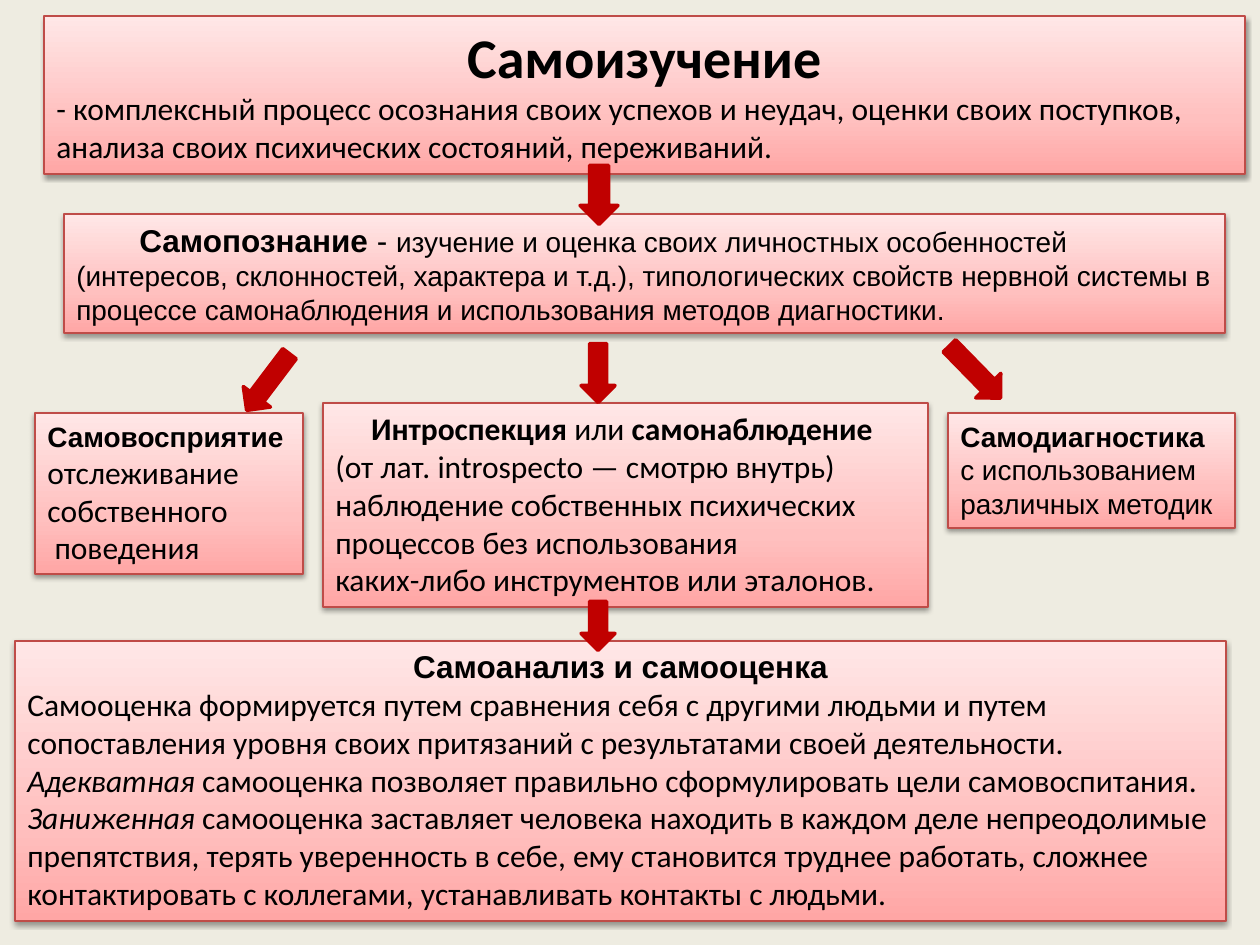
from lxml import etree
from pptx import Presentation
from pptx import util as u
from pptx.dml.color import RGBColor
from pptx.enum import shapes, text
from pptx.oxml.ns import qn

PX = u.Inches(1) / 126
BACKGROUND, ARROW, BORDER, INK = "EEECE1", "C00000", "BF4C48", "000000"
GRADIENT = [(0, "FFA6A5"), (35, "FFC0BF"), (100, "FFE7E7")]
LEFT, CENTER = text.PP_ALIGN.LEFT, text.PP_ALIGN.CENTER
TOP, MIDDLE = text.MSO_ANCHOR.TOP, text.MSO_ANCHOR.MIDDLE

# Run styles: font, size, bold, italic
TITLE = ("Calibri", 32, True, False)
BODY = ("Calibri", 18, False, False)
STRONG = ("Calibri", 18, True, False)
EMPHASIS = ("Calibri", 18, False, True)
HEAD = ("Arial", 18, True, False)
DASH = ("Arial", 18, False, False)
SMALL_HEAD = ("Arial", 16, True, False)
SMALL = ("Arial", 16, False, False)

# Boxes: (left, top, width, height), anchor, first-line indent, paragraphs (alignment, runs)
BOXES = [
    ((44, 16, 1201, 158), TOP, 0, [
        (CENTER, [("Самоизучение", TITLE)]),
        (LEFT, [("- комплексный процесс осознания своих успехов и неудач, оценки своих поступков, "
                 "анализа своих психических состояний, переживаний.", BODY)]),
    ]),
    ((15, 641, 1211, 280), TOP, 0, [
        (CENTER, [("Самоанализ и самооценка", HEAD)]),
        (LEFT, [
            ("Самооценка формируется путем сравнения себя с другими людьми и путем "
             "сопоставления уровня своих притязаний с результатами своей деятельности. ", BODY),
            ("Адекватная", EMPHASIS),
            (" самооценка позволяет правильно сформулировать цели самовоспитания. ", BODY),
            ("Заниженная ", EMPHASIS),
            ("самооценка заставляет человека находить в каждом деле непреодолимые "
             "препятствия, терять уверенность в себе, ему становится труднее работать, сложнее "
             "контактировать с коллегами, устанавливать контакты с людьми.", BODY),
        ]),
    ]),
    ((64, 214, 1161, 119), MIDDLE, 63, [
        (LEFT, [
            ("Самопознание ", HEAD),
            ("- ", DASH),
            ("изучение и оценка своих личностных особенностей (интересов, склонностей, "
             "характера и т.д.), типологических свойств нервной системы в процессе "
             "самонаблюдения и использования методов диагностики.", SMALL),
        ]),
    ]),
    ((35, 413, 268, 161), TOP, 0, [
        (LEFT, [("Самовосприятие", SMALL_HEAD)]),
        (LEFT, [("отслеживание собственного", BODY)]),
        (LEFT, [(" поведения", BODY)]),
    ]),
    ((323, 403, 605, 204), TOP, 0, [
        (CENTER, [("Интроспекция", STRONG), (" или ", BODY), ("самонаблюдение ", STRONG)]),
        (LEFT, [("(от лат. introspecto — смотрю внутрь) наблюдение собственных психических "
                 "процессов без использования", BODY)]),
        (LEFT, [("каких-либо инструментов или эталонов.", BODY)]),
    ]),
    ((948, 413, 287, 115), TOP, 0, [
        (LEFT, [("Самодиагностика", SMALL_HEAD)]),
        (LEFT, [("с использованием различных методик", SMALL)]),
    ]),
]

# Arrows: centre x, centre y, length, thickness, rotation
ARROWS = [
    (599, 195, 59, 38, 90),
    (268, 382, 71, 34, 127.1),
    (598, 373, 59, 34, 90),
    (975, 372, 73, 35, 45.6),
    (598, 626, 49, 34, 90),
]


def px(n):
    return u.Emu(round(n * PX))


def rgb(color):
    return RGBColor.from_string(color)


def add_shape(s, kind, box, line, width):
    sp = s.shapes.add_shape(kind, *map(px, box))
    sp.shadow.inherit = False
    sp.line.color.rgb = rgb(line)
    sp.line.width = u.Pt(width)
    return sp


def add_color(parent, color):
    return etree.SubElement(parent, qn("a:srgbClr"), val=color)


def fill_gradient(sp):
    sp.fill.gradient()
    sp.fill.gradient_angle = 90
    stops = sp.element.spPr.find(".//" + qn("a:gsLst"))
    for old in list(stops):
        stops.remove(old)
    for percent, color in GRADIENT:
        add_color(etree.SubElement(stops, qn("a:gs"), pos=str(percent * 1000)), color)


def add_shadow(sp):
    effects = sp.element.spPr.find(qn("a:effectLst"))
    shadow = etree.SubElement(effects, qn("a:outerShdw"), blurRad=str(u.Pt(3.1)),
                              dist=str(u.Pt(1.6)), dir="5400000", rotWithShape="0")
    etree.SubElement(add_color(shadow, INK), qn("a:alpha"), val="38000")


def add_text(tf, anchor, indent, paragraphs):
    tf.word_wrap = True
    tf.auto_size = text.MSO_AUTO_SIZE.SHAPE_TO_FIT_TEXT
    tf.vertical_anchor = anchor
    for i, (align, runs) in enumerate(paragraphs):
        p = tf.add_paragraph() if i else tf.paragraphs[0]
        p.alignment = align
        if indent:
            p._p.get_or_add_pPr().set("indent", str(px(indent)))
        for words, (font, size, bold, italic) in runs:
            r = p.add_run()
            r.text = words
            r.font.name, r.font.size = font, u.Pt(size)
            r.font.bold, r.font.italic = bold, italic
            r.font.color.rgb = rgb(INK)


def main():
    prs = Presentation()
    prs.slide_width, prs.slide_height = u.Inches(10), u.Inches(7.5)
    s = prs.slides.add_slide(prs.slide_layouts[6])
    s.background.fill.solid()
    s.background.fill.fore_color.rgb = rgb(BACKGROUND)

    for box, anchor, indent, paragraphs in BOXES:
        sp = add_shape(s, shapes.MSO_SHAPE.RECTANGLE, box, BORDER, 0.75)
        fill_gradient(sp)
        add_shadow(sp)
        add_text(sp.text_frame, anchor, indent, paragraphs)

    for x, y, w, h, angle in ARROWS:
        box = (x - w / 2, y - h / 2, w, h)
        sp = add_shape(s, shapes.MSO_SHAPE.RIGHT_ARROW, box, ARROW, 2)
        sp.fill.solid()
        sp.fill.fore_color.rgb = rgb(ARROW)
        sp.rotation = angle

    prs.save("out.pptx")


if __name__ == "__main__":
    main()
